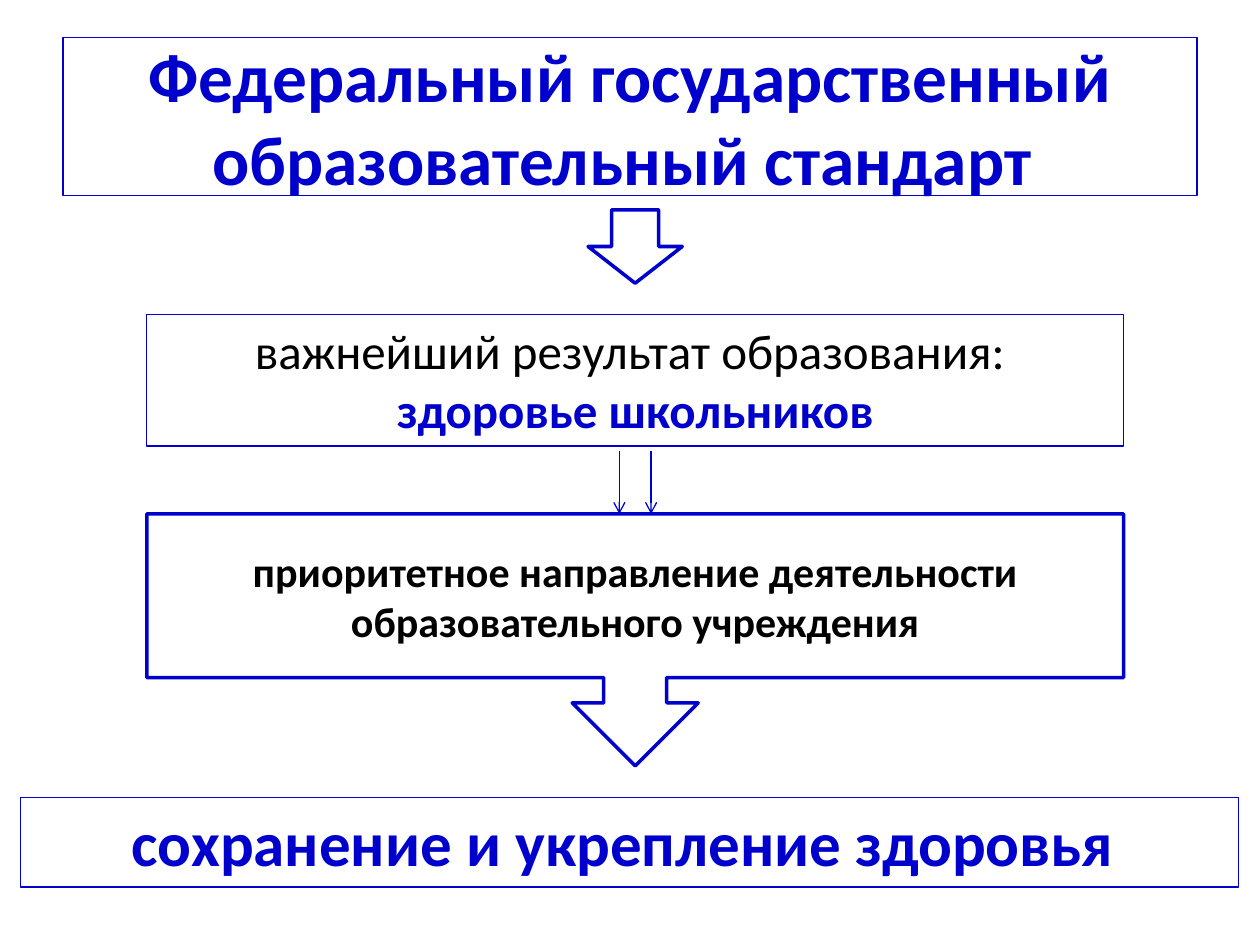
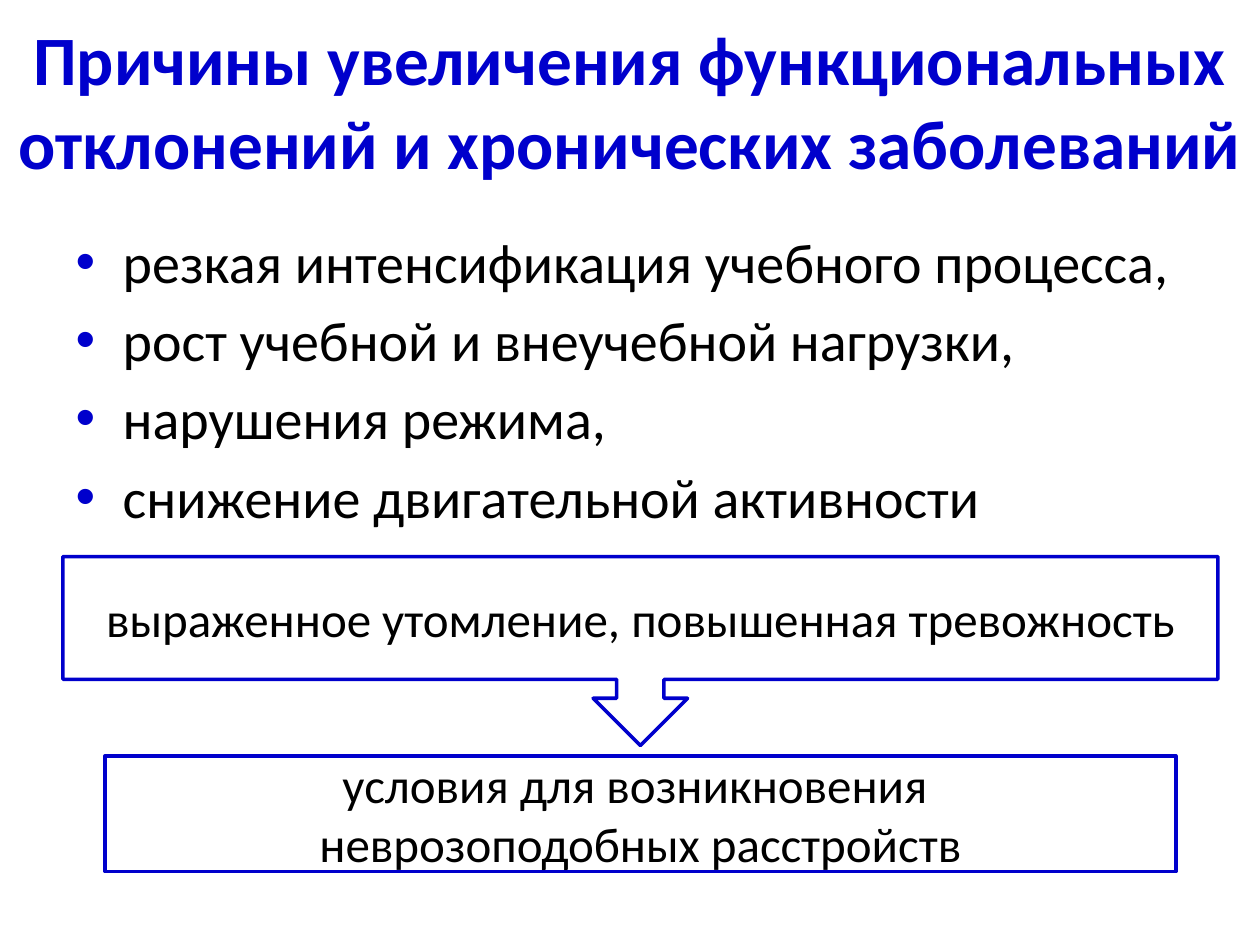
import pptx
import pptx.dml.color
import pptx.enum.shapes
import pptx.enum.text
import pptx.oxml
import pptx.oxml.ns
import pptx.util
from dataclasses import dataclass

Cm = pptx.util.Cm
Pt = pptx.util.Pt
SHAPE = pptx.enum.shapes.MSO_SHAPE
ANCHOR = pptx.enum.text.MSO_ANCHOR
CENTER = pptx.enum.text.PP_ALIGN.CENTER

COLORS = {"accent": "0000CC", "text": "000000", "paper": "FFFFFF"}
FONT_NAME = "Calibri"
THIN, THICK = 0.75, 2
TITLE = {"size": 39.6, "bold": True, "color": "accent"}
BODY = {"size": 32, "bold": False, "color": "text"}
PLAIN = {"size": 28, "bold": False, "color": "text"}
STRONG = {"size": 28, "bold": True, "color": "accent"}
PRIORITY = {"size": 24, "bold": True, "color": "text"}
GOAL = {"size": 36, "bold": True, "color": "accent"}


@dataclass
class Box:
    left: float
    top: float
    width: float
    height: float

    @property
    def middle(self):
        return self.left + self.width / 2

    def centered(self, top, width, height, shift=0):
        return Box(self.middle - width / 2 + shift, self.top + top, width, height)

    def lengths(self):
        return [Cm(value) for value in (self.left, self.top, self.width, self.height)]


def rgb(name):
    return pptx.dml.color.RGBColor.from_string(COLORS[name])


def add_element(parent, tag, **attributes):
    element = pptx.oxml.parse_xml(f"<a:{tag} {pptx.oxml.ns.nsdecls('a')}/>")
    for name, value in attributes.items():
        element.set(name, value)
    parent.append(element)
    return element


def format_font(font, look):
    values = {"name": FONT_NAME, "size": Pt(look["size"]), "bold": look["bold"]}
    for name, value in values.items():
        setattr(font, name, value)
    font.color.rgb = rgb(look["color"])


def write_text(shape, lines, anchor=ANCHOR.MIDDLE, align=CENTER):
    frame = shape.text_frame
    values = {
        "word_wrap": True,
        "auto_size": pptx.enum.text.MSO_AUTO_SIZE.NONE,
        "vertical_anchor": anchor,
    }
    for name, value in values.items():
        setattr(frame, name, value)
    for index, (text, look) in enumerate(lines):
        para = frame.add_paragraph() if index else frame.paragraphs[0]
        para.alignment = align
        span = para.add_run()
        span.text = text
        format_font(span.font, look)
    return frame.paragraphs


def outline(shape, weight):
    shape.line.color.rgb = rgb("accent")
    shape.line.width = Pt(weight)


def move(shape, box):
    for name, value in zip(("left", "top", "width", "height"), box.lengths()):
        setattr(shape, name, value)


def add_block(page, kind, box, weight, lines=(), anchor=ANCHOR.MIDDLE):
    shape = page.shapes.add_shape(kind, *box.lengths())
    shape.shadow.inherit = False
    shape.fill.solid()
    shape.fill.fore_color.rgb = rgb("paper")
    outline(shape, weight)
    write_text(shape, lines, anchor)


def add_arrow(page, x, top, bottom):
    arrow = page.shapes.add_connector(
        pptx.enum.shapes.MSO_CONNECTOR.STRAIGHT, Cm(x), Cm(top), Cm(x), Cm(bottom)
    )
    outline(arrow, THIN)
    add_element(arrow.line._get_or_add_ln(), "tailEnd", type="arrow")
    add_element(arrow._element.spPr, "effectLst")


def place_title(page, box, text):
    title = page.shapes.title
    move(title, box)
    write_text(title, [(text, TITLE)])
    return title


def place_causes(page, box, causes):
    body = page.placeholders[1]
    move(body, box)
    paragraphs = write_text(body, [(cause, BODY) for cause in causes], ANCHOR.TOP, None)
    for index, para in enumerate(paragraphs):
        properties = para._p.get_or_add_pPr()
        properties.set("marL", str(Cm(0.95)))
        properties.set("indent", str(-Cm(0.95)))
        color = add_element(properties, "buClr")
        add_element(color, "srgbClr", val=COLORS["accent"])
        add_element(properties, "buFont", typeface="Arial")
        add_element(properties, "buChar", char="•")
        para.space_before = Pt(6.4 if index else 0)


def place_standard_flow(page, box):
    add_block(page, SHAPE.DOWN_ARROW, box.centered(0, 1.9, 1.48), THICK)
    add_block(
        page, SHAPE.RECTANGLE, box.centered(2.11, box.width, 2.65), THIN,
        [("важнейший результат образования: ", PLAIN), ("здоровье школьников", STRONG)],
        ANCHOR.TOP,
    )
    add_block(
        page, SHAPE.DOWN_ARROW_CALLOUT, box.centered(6.13, box.width, 5.08), THICK,
        [("приоритетное направление деятельности образовательного учреждения", PRIORITY)],
    )
    add_block(
        page, SHAPE.RECTANGLE, box.centered(11.85, 24.55, 1.8, -0.11), THIN,
        [("сохранение и укрепление здоровья ", GOAL)], ANCHOR.TOP,
    )
    for shift in (-0.32, 0.32):
        add_arrow(page, box.middle + shift, box.top + 4.86, box.top + 6.13)


def place_consequences(page, box):
    add_block(
        page, SHAPE.DOWN_ARROW_CALLOUT, box.centered(0, box.width, 3.81), THICK,
        [("выраженное утомление, повышенная тревожность", PLAIN)],
    )
    add_block(
        page, SHAPE.RECTANGLE, box.centered(4.02, 21.59, 2.33), THICK,
        [("условия для возникновения ", PLAIN), ("неврозоподобных расстройств", PLAIN)],
    )


def build_standard_page(deck):
    page = deck.slides.add_slide(deck.slide_layouts[5])
    title = place_title(
        page, Box(1.27, 0.76, 22.86, 3.18),
        "Федеральный государственный образовательный стандарт ",
    )
    outline(title, THIN)
    place_standard_flow(page, Box(2.96, 4.23, 19.69, 13.65))


def build_causes_page(deck):
    page = deck.slides.add_slide(deck.slide_layouts[1])
    place_title(
        page, Box(0, 0.42, 25.4, 3.18),
        "Причины увеличения функциональных отклонений и хронических заболеваний",
    )
    place_causes(page, Box(1.27, 4.45, 22.86, 6.77), [
        "резкая интенсификация учебного процесса,",
        "рост учебной и внеучебной нагрузки,",
        "нарушения режима,",
        "снижение двигательной активности",
    ])
    place_consequences(page, Box(1.27, 11.22, 23.28, 6.35))


def main():
    deck = pptx.Presentation()
    deck.slide_width, deck.slide_height = Cm(25.4), Cm(19.05)
    build_standard_page(deck)
    build_causes_page(deck)
    deck.save("out.pptx")


if __name__ == "__main__":
    main()
